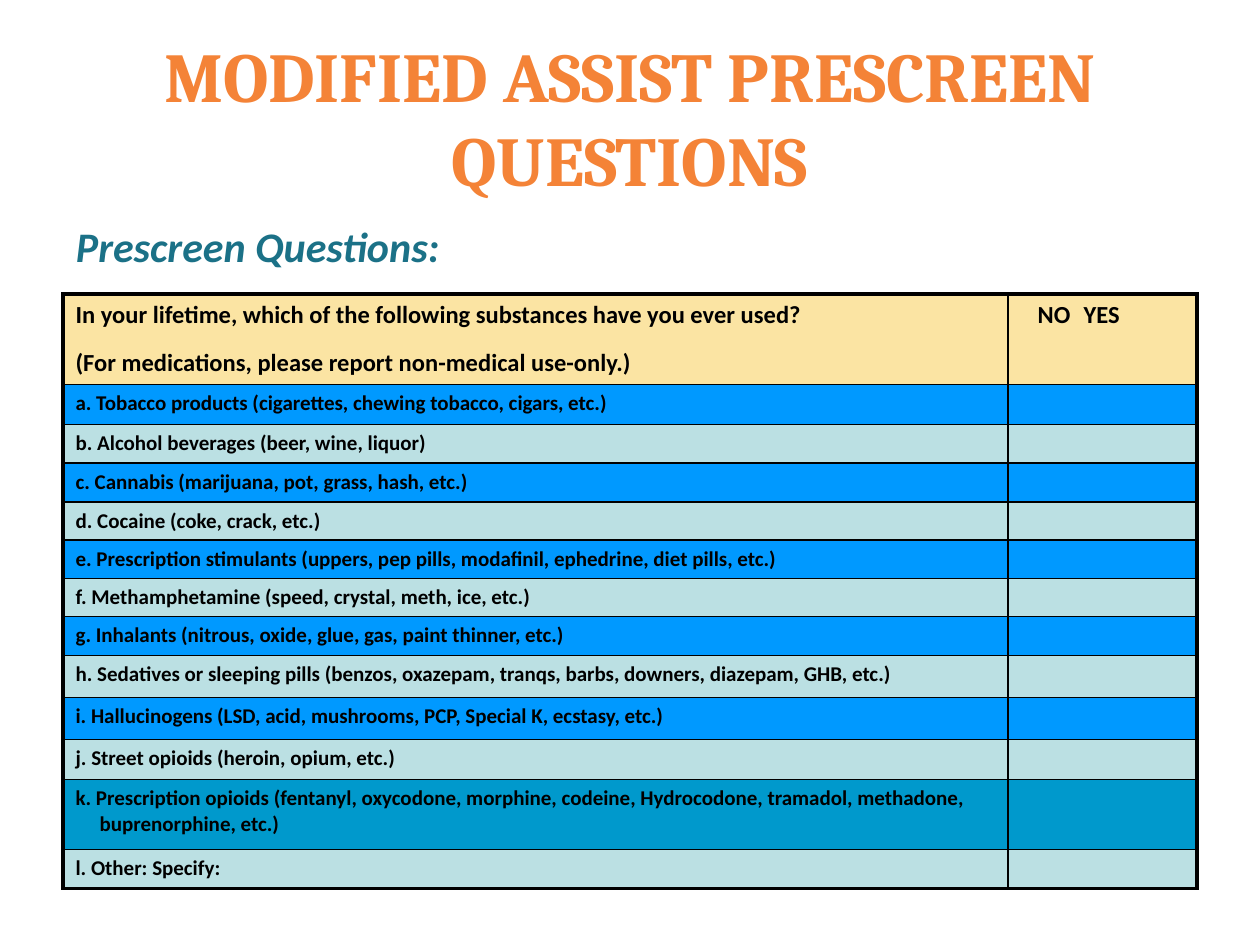
from pptx import Presentation
from pptx.dml.color import RGBColor
from pptx.enum.text import MSO_ANCHOR, MSO_AUTO_SIZE, PP_ALIGN
from pptx.oxml import parse_xml
from pptx.oxml.ns import nsdecls
from pptx.util import Emu, Pt

PX = 914400 / 126
BLACK, SAND, BLUE, MIST, TEAL = "000000", "FBE4A3", "0099FF", "BBE0E3", "0099CC"
THICK, THIN = 2.25, 1

HEADER = [
    "In your lifetime, which of the following substances have you ever used?",
    "(For medications, please report non-medical use-only.)",
]
HEADER_HEIGHT = 90
# Question, row height, fill
QUESTIONS = [
    ("a. Tobacco products (cigarettes, chewing tobacco, cigars, etc.)", 40, BLUE),
    ("b. Alcohol beverages (beer, wine, liquor)", 38, MIST),
    ("c. Cannabis (marijuana, pot, grass, hash, etc.)", 39, BLUE),
    ("d. Cocaine (coke, crack, etc.)", 38, MIST),
    ("e. Prescription stimulants (uppers, pep pills, modafinil, ephedrine, diet pills, etc.)", 38, BLUE),
    ("f. Methamphetamine (speed, crystal, meth, ice, etc.)", 38, MIST),
    ("g. Inhalants (nitrous, oxide, glue, gas, paint thinner, etc.)", 39, BLUE),
    ("h. Sedatives or sleeping pills (benzos, oxazepam, tranqs, barbs, downers, diazepam, GHB, etc.)", 42, MIST),
    ("i. Hallucinogens (LSD, acid, mushrooms, PCP, Special K, ecstasy, etc.)", 42, BLUE),
    ("j. Street opioids (heroin, opium, etc.)", 40, MIST),
    ("k. Prescription opioids (fentanyl, oxycodone, morphine, codeine, Hydrocodone, tramadol, "
     "methadone, buprenorphine, etc.)", 70, TEAL),
    ("l. Other: Specify:", 39, MIST),
]


def px(n):
    return Emu(round(n * PX))


def rgb(value):
    return RGBColor.from_string(value)


def format_text(tf, size, color, font="Calibri", italic=None):
    for p in tf.paragraphs:
        for r in p.runs:
            f = r.font
            f.name, f.size, f.bold, f.italic = font, Pt(size), True, italic
            f.color.rgb = rgb(color)


def set_frame(tf, anchor):
    tf.word_wrap = True
    tf.auto_size = MSO_AUTO_SIZE.NONE
    tf.vertical_anchor = anchor
    tf.margin_left = tf.margin_right = px(13)
    tf.margin_top = tf.margin_bottom = px(1)


def add_title(s, text):
    sp = s.shapes.title
    sp.left, sp.top, sp.width, sp.height = px(63), px(38), px(1134), px(157)
    tf = sp.text_frame
    tf.text = text
    set_frame(tf, MSO_ANCHOR.MIDDLE)
    tf.paragraphs[0].alignment = PP_ALIGN.CENTER
    format_text(tf, 40, "F48337", "Cambria")


def add_subtitle(s, text):
    tf = s.shapes.add_textbox(px(63), px(220), px(1134), px(63)).text_frame
    tf.text = text
    set_frame(tf, MSO_ANCHOR.TOP)
    format_text(tf, 24, "1B7187", italic=True)


def set_borders(cell, widths):
    """Put black lines on the left, right, top and bottom, in that order."""
    tc_pr = cell._tc.get_or_add_tcPr()
    for i, (side, width) in enumerate(zip("LRTB", widths)):
        tc_pr.insert(i, parse_xml(
            f'<a:ln{side} {nsdecls("a")} w="{Pt(width)}"><a:solidFill>'
            f'<a:srgbClr val="{BLACK}"/></a:solidFill></a:ln{side}>'))


def set_hanging(p, left, first):
    p_pr = p._p.get_or_add_pPr()
    p_pr.set("marL", str(px(left)))
    p_pr.set("indent", str(px(first)))
    return p_pr


def fill_header(question, answers):
    question.text_frame.text = "\n".join(HEADER)
    question.text_frame.paragraphs[1].space_before = Pt(10.5)
    answers.text_frame.text = "NO\tYES"
    p_pr = set_hanging(answers.text_frame.paragraphs[0], 0, 17)
    p_pr.append(parse_xml(
        f'<a:tabLst {nsdecls("a")}><a:tab pos="{px(82)}" algn="l"/></a:tabLst>'))
    for cell in (question, answers):
        format_text(cell.text_frame, 14, BLACK)


def add_questions(s):
    heights = [HEADER_HEIGHT] + [height for _, height, _ in QUESTIONS]
    fills = [SAND] + [fill for _, _, fill in QUESTIONS]
    last = len(QUESTIONS)
    table = s.shapes.add_table(last + 1, 2, px(63), px(294), px(1134), px(sum(heights))).table
    table.columns[0].width, table.columns[1].width = px(945), px(189)

    # Fills and borders, thick around the outside
    for i, (height, fill) in enumerate(zip(heights, fills)):
        table.rows[i].height = px(height)
        for j, cell in enumerate(table.rows[i].cells):
            cell.fill.solid()
            cell.fill.fore_color.rgb = rgb(fill)
            outer = (j == 0, j == 1, i == 0, i == last)
            set_borders(cell, [THICK if edge else THIN for edge in outer])

    # Wording
    fill_header(table.cell(0, 0), table.cell(0, 1))
    for i, (text, _, _) in enumerate(QUESTIONS, start=1):
        tf = table.cell(i, 0).text_frame
        tf.text = text
        set_hanging(tf.paragraphs[0], 24, -24)
        format_text(tf, 12, BLACK)
        # Keep the empty answer cells as low as their rows
        table.cell(i, 1).text_frame.paragraphs[0].font.size = Pt(12)


def main():
    prs = Presentation()
    prs.slide_width, prs.slide_height = px(1260), px(945)
    s = prs.slides.add_slide(prs.slide_layouts[5])
    add_title(s, "MODIFIED ASSIST PRESCREEN QUESTIONS")
    add_subtitle(s, "Prescreen Questions:")
    add_questions(s)
    prs.save("out.pptx")


if __name__ == "__main__":
    main()
